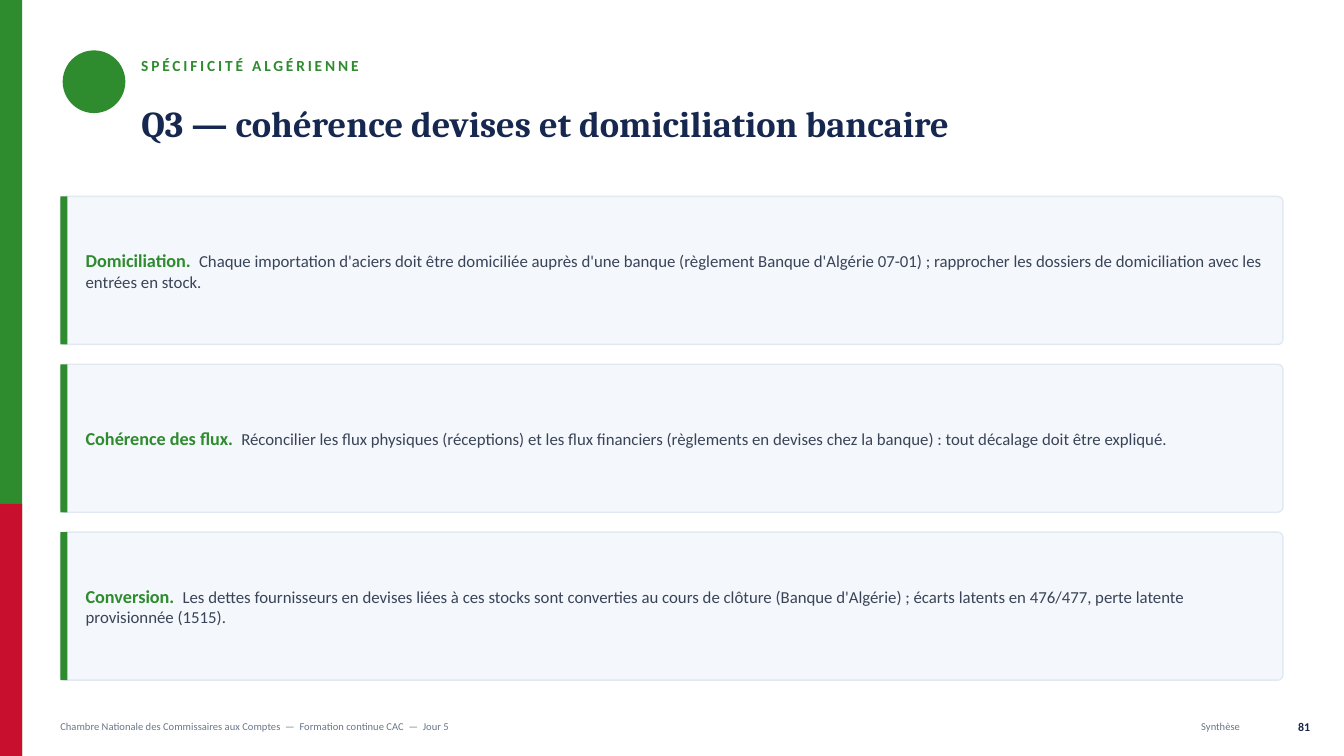
from dataclasses import dataclass

from pptx import Presentation
from pptx.dml.color import RGBColor
from pptx.enum.shapes import MSO_SHAPE
from pptx.enum.text import MSO_ANCHOR, MSO_AUTO_SIZE, PP_ALIGN
from pptx.shapes.autoshape import Shape
from pptx.slide import Slide
from pptx.util import Cm, Pt

RECT = MSO_SHAPE.RECTANGLE
ROUNDED = MSO_SHAPE.ROUNDED_RECTANGLE
OVAL = MSO_SHAPE.OVAL
MIDDLE = MSO_ANCHOR.MIDDLE
NO_AUTOFIT = MSO_AUTO_SIZE.NONE
LEFT = PP_ALIGN.LEFT
RIGHT = PP_ALIGN.RIGHT

GREEN = "2E8B2E"
RED = "C8102E"
NAVY = "16284F"
SLATE = "3A4458"
GREY = "6B7689"
CARD_FILL = "F4F7FB"
CARD_BORDER = "E2E9F2"

SLIDE_WIDTH, SLIDE_HEIGHT = 33.87, 19.05
BAND_WIDTH = 0.56
RED_TOP = 12.7
MARGIN = 1.52
HEADING_LEFT = 3.56
CARD_TOP, CARD_WIDTH, CARD_HEIGHT, CARD_PITCH = 4.95, 30.81, 3.73, 4.23
ACCENT_WIDTH = 0.18
CARD_TEXT_LEFT, CARD_TEXT_WIDTH = 2.16, 29.72
FOOTER_TOP, FOOTER_HEIGHT = 17.93, 0.76


@dataclass(frozen=True)
class Box:
    left: float
    top: float
    width: float
    height: float

    def lengths(self) -> tuple[Cm, Cm, Cm, Cm]:
        return Cm(self.left), Cm(self.top), Cm(self.width), Cm(self.height)


@dataclass(frozen=True)
class Span:
    text: str
    size: float
    color: str
    bold: bool = False
    font: str = "Calibri"
    tracking: float = 0


@dataclass(frozen=True)
class Point:
    heading: str
    detail: str


POINTS = [
    Point(
        "Domiciliation.",
        "Chaque importation d'aciers doit être domiciliée auprès d'une banque "
        "(règlement Banque d'Algérie 07-01) ; rapprocher les dossiers de "
        "domiciliation avec les entrées en stock.",
    ),
    Point(
        "Cohérence des flux.",
        "Réconcilier les flux physiques (réceptions) et les flux financiers "
        "(règlements en devises chez la banque) : tout décalage doit être expliqué.",
    ),
    Point(
        "Conversion.",
        "Les dettes fournisseurs en devises liées à ces stocks sont converties au "
        "cours de clôture (Banque d'Algérie) ; écarts latents en 476/477, perte "
        "latente provisionnée (1515).",
    ),
]
FOOTER_PARTS = [
    "Chambre Nationale des Commissaires aux Comptes",
    "—",
    "Formation continue CAC",
    "—",
    "Jour 5",
]


def rgb(color: str) -> RGBColor:
    return RGBColor.from_string(color)


def add_block(slide: Slide, kind: MSO_SHAPE, box: Box, fill: str, border: str = "") -> Shape:
    block = slide.shapes.add_shape(kind, *box.lengths())
    block.shadow.inherit = False
    block.fill.solid()
    block.fill.fore_color.rgb = rgb(fill)
    if border:
        block.line.color.rgb = rgb(border)
        block.line.width = Pt(1)
    else:
        block.line.fill.background()
    return block


def write(holder: Shape, spans: list[Span], align: PP_ALIGN = LEFT, line_spacing: float = 1.0) -> None:
    frame = holder.text_frame
    frame.word_wrap = True
    frame.auto_size = NO_AUTOFIT
    frame.vertical_anchor = MIDDLE
    frame.margin_left = frame.margin_top = frame.margin_right = frame.margin_bottom = 0
    paragraph = frame.paragraphs[0]
    paragraph.alignment = align
    paragraph.line_spacing = line_spacing
    for span in spans:
        run = paragraph.add_run()
        run.text = span.text
        run.font.size = Pt(span.size)
        run.font.name = span.font
        run.font.bold = span.bold
        run.font.color.rgb = rgb(span.color)
        if span.tracking:
            run.font._element.set("spc", str(round(span.tracking * 100)))


def add_text(slide: Slide, box: Box, spans: list[Span], align: PP_ALIGN = LEFT) -> None:
    write(slide.shapes.add_textbox(*box.lengths()), spans, align)


def add_heading(slide: Slide) -> None:
    add_block(slide, OVAL, Box(1.58, 1.27, 1.58, 1.58), GREEN)
    add_text(
        slide,
        Box(HEADING_LEFT, 1.27, 27.94, 0.76),
        [Span("SPÉCIFICITÉ ALGÉRIENNE", 11, GREEN, bold=True, tracking=2)],
    )
    title = slide.shapes.title
    title.left, title.top, title.width, title.height = Box(HEADING_LEFT, 2.08, 28.7, 2.16).lengths()
    heading = Span("Q3 — cohérence devises et domiciliation bancaire", 26, NAVY, True, "Cambria")
    write(title, [heading], line_spacing=0.95)


def add_card(slide: Slide, point: Point, top: float) -> None:
    card = add_block(slide, ROUNDED, Box(MARGIN, top, CARD_WIDTH, CARD_HEIGHT), CARD_FILL, CARD_BORDER)
    card.adjustments[0] = 0.034
    add_block(slide, RECT, Box(MARGIN, top, ACCENT_WIDTH, CARD_HEIGHT), GREEN)
    add_text(
        slide,
        Box(CARD_TEXT_LEFT, top + 0.13, CARD_TEXT_WIDTH, CARD_HEIGHT - 0.26),
        [
            Span(point.heading, 13, GREEN, bold=True),
            Span(" ", 13, GREEN, bold=True, tracking=3),
            Span(point.detail, 12, SLATE),
        ],
    )


def add_footer(slide: Slide) -> None:
    spans = [Span(FOOTER_PARTS[0], 7.5, GREY)]
    for part in FOOTER_PARTS[1:]:
        spans += [Span(" ", 7.5, GREY, tracking=1.7), Span(part, 7.5, GREY)]
    add_text(slide, Box(MARGIN, FOOTER_TOP, 23.37, FOOTER_HEIGHT), spans)
    add_text(slide, Box(23.88, FOOTER_TOP, 7.37, FOOTER_HEIGHT), [Span("Synthèse", 7.5, GREY)], RIGHT)
    add_text(slide, Box(31.75, FOOTER_TOP, 1.27, FOOTER_HEIGHT), [Span("81", 8.5, NAVY, bold=True)], RIGHT)


def main() -> None:
    deck = Presentation()
    deck.slide_width, deck.slide_height = Cm(SLIDE_WIDTH), Cm(SLIDE_HEIGHT)
    slide = deck.slides.add_slide(deck.slide_layouts.get_by_name("Title Only"))

    add_block(slide, RECT, Box(0, 0, BAND_WIDTH, SLIDE_HEIGHT), GREEN)
    add_block(slide, RECT, Box(0, RED_TOP, BAND_WIDTH, SLIDE_HEIGHT - RED_TOP), RED)
    add_heading(slide)
    for row, point in enumerate(POINTS):
        add_card(slide, point, CARD_TOP + row * CARD_PITCH)
    add_footer(slide)

    deck.save("out.pptx")


if __name__ == "__main__":
    main()
